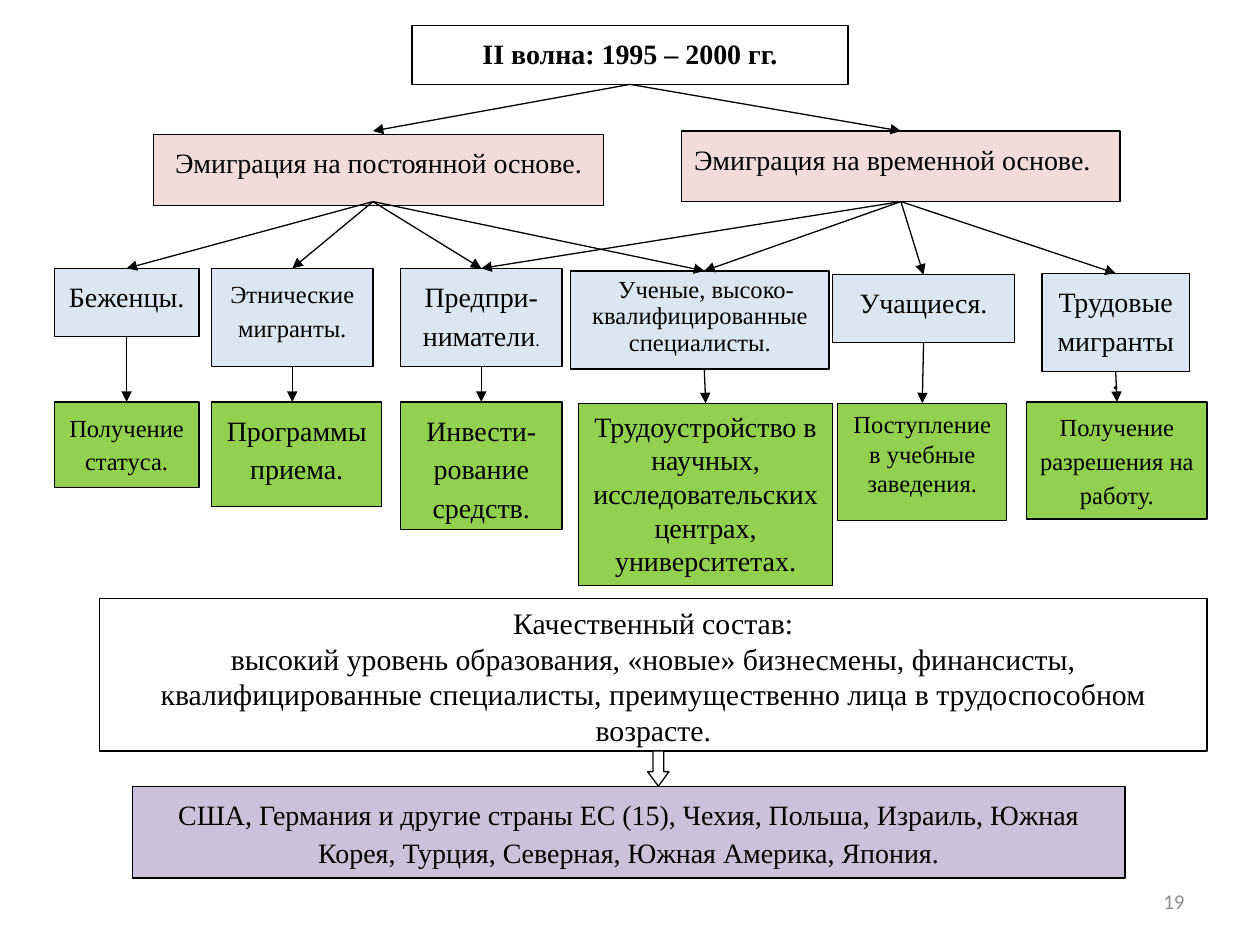
"""Builds a slide with a flow chart of the second emigration wave, 1995 – 2000."""
import pptx
import pptx.dml.color
import pptx.enum.shapes
import pptx.enum.text
import pptx.oxml.ns
import pptx.util
from lxml import etree

Inches, Pt = pptx.util.Inches, pptx.util.Pt
MSO_SHAPE = pptx.enum.shapes.MSO_SHAPE
ALIGN = pptx.enum.text.PP_ALIGN
ANCHOR = pptx.enum.text.MSO_ANCHOR

TITLE, BRANCH, GROUP, RESULT, PLAIN, COUNTRIES = (
    "FFFFFF", "F2DCDB", "DCE6F2", "92D050", "FFFFFF", "CCC1DA")

HEADING = ("II волна: 1995 – 2000 гг.", (3.27, 0.2, 3.46, 0.47))

BOXES = [
    ("permanent", BRANCH, (1.22, 1.07, 3.57, 0.56), "Эмиграция на постоянной основе.", {}),
    ("temporary", BRANCH, (5.41, 1.04, 3.48, 0.56), "Эмиграция на временной основе.",
     {"align": ALIGN.LEFT}),
    ("refugees", GROUP, (0.43, 2.13, 1.15, 0.54), "Беженцы.", {}),
    ("ethnic", GROUP, (1.68, 2.13, 1.28, 0.78), "Этнические мигранты.", {"size": 14}),
    ("business", GROUP, (3.18, 2.13, 1.28, 0.78), "Предпри-ниматели", {"small_end": "."}),
    ("scientists", GROUP, (4.53, 2.15, 2.05, 0.78),
     "Ученые, высоко-квалифицированные специалисты.",
     {"size": 14, "spacing": 0.9, "indent": 0.1}),
    ("students", GROUP, (6.61, 2.18, 1.44, 0.54), "Учащиеся.", {}),
    ("workers", GROUP, (8.27, 2.17, 1.17, 0.78), "Трудовые мигранты.", {}),
    ("status", RESULT, (0.43, 3.19, 1.15, 0.68), "Получение статуса.", {"size": 14}),
    ("programmes", RESULT, (1.68, 3.19, 1.35, 0.83), "Программы приема.", {}),
    ("investment", RESULT, (3.18, 3.19, 1.28, 1.01), "Инвести-рование средств.", {}),
    ("employment", RESULT, (4.59, 3.2, 2.02, 1.45),
     "Трудоустройство в научных, исследовательских центрах,\nуниверситетах.",
     {"spacing": 1, "after": 0}),
    ("study", RESULT, (6.65, 3.2, 1.34, 0.93), "Поступление\nв учебные заведения.",
     {"size": 14, "spacing": 1, "after": 0}),
    ("permit", RESULT, (8.15, 3.19, 1.43, 0.93), "Получение разрешения на работу.", {"size": 14}),
    ("quality", PLAIN, (0.79, 4.75, 8.79, 1.21),
     "Качественный состав:\nвысокий уровень образования, «новые» бизнесмены, финансисты, "
     "квалифицированные специалисты, преимущественно лица в трудоспособном возрасте.",
     {"size": 17, "spacing": 1, "after": 0}),
    ("countries", COUNTRIES, (1.05, 6.24, 7.88, 0.73),
     "США, Германия и другие страны ЕС (15), Чехия, Польша, Израиль, Южная Корея, "
     "Турция, Северная, Южная Америка, Япония.", {}),
]

LINKS = {
    "heading": ["permanent", "temporary"],
    "permanent": ["refugees", "ethnic", "business", "scientists"],
    "temporary": ["business", "scientists", "students", "workers"],
    "refugees": ["status"],
    "ethnic": ["programmes"],
    "business": ["investment"],
    "scientists": ["employment"],
    "students": ["study"],
    "workers": ["permit"],
}

OFF_CENTRE = {
    "permanent": (2.96, 1.04, 1.6),
    "scientists": (5.59, 2.15, 2.93),
    "programmes": (2.32, 3.19, 4.02),
}


def rgb(value):
    return pptx.dml.color.RGBColor.from_string(value)


def write(sp, text, size=16, font="Times New Roman", color="000000", bold=False,
          align=ALIGN.CENTER, anchor=ANCHOR.TOP, spacing=1.15, after=10, indent=0,
          small_end=""):
    tf = sp.text_frame
    tf.word_wrap = True
    tf.auto_size = pptx.enum.text.MSO_AUTO_SIZE.NONE
    tf.vertical_anchor = anchor
    for i, line in enumerate(text.split("\n")):
        p = tf.add_paragraph() if i else tf.paragraphs[0]
        p.alignment, p.line_spacing, p.space_after = align, spacing, Pt(after)
        if indent:
            p._p.get_or_add_pPr().set("indent", str(Inches(indent)))
        for part, points in ((line, size), (small_end, 10)):
            if part:
                r = p.add_run()
                r.text = part
                r.font.size, r.font.name, r.font.bold = Pt(points), font, bold
                r.font.color.rgb = rgb(color)


def paint(sp, fill):
    sp.shadow.inherit = False
    sp.fill.solid()
    sp.fill.fore_color.rgb = rgb(fill)
    sp.line.color.rgb = rgb("000000")
    sp.line.width = Pt(0.75)


def add_shape(s, kind, at, fill):
    sp = s.shapes.add_shape(kind, *map(Inches, at))
    paint(sp, fill)
    return sp


def ports(name, sp):
    if name in OFF_CENTRE:
        return [Inches(v) for v in OFF_CENTRE[name]]
    return sp.left + sp.width // 2, sp.top, sp.top + sp.height


def add_arrow(s, nodes, start, end):
    x1, _, y1 = ports(start, nodes[start])
    x2, y2, _ = ports(end, nodes[end])
    line = s.shapes.add_connector(pptx.enum.shapes.MSO_CONNECTOR.STRAIGHT, x1, y1, x2, y2)
    if start not in OFF_CENTRE:
        line.begin_connect(nodes[start], 2)
    if end not in OFF_CENTRE:
        line.end_connect(nodes[end], 0)
    line.line.color.rgb = rgb("000000")
    line.line.width = Pt(0.75)
    qn = pptx.oxml.ns.qn
    etree.SubElement(line.line._get_or_add_ln(), qn("a:tailEnd"), type="triangle")
    etree.SubElement(line._element.spPr, qn("a:effectLst"))


def main():
    prs = pptx.Presentation()
    prs.slide_width, prs.slide_height = Inches(10), Inches(7.5)
    s = prs.slides.add_slide(prs.slide_layouts[5])

    title = s.shapes.title
    text, at = HEADING
    title.left, title.top, title.width, title.height = map(Inches, at)
    paint(title, TITLE)
    write(title, text, bold=True)

    nodes = {"heading": title}
    for name, fill, at, text, style in BOXES:
        nodes[name] = add_shape(s, MSO_SHAPE.RECTANGLE, at, fill)
        write(nodes[name], text, **style)

    for start, ends in LINKS.items():
        for end in ends:
            add_arrow(s, nodes, start, end)

    down = add_shape(s, MSO_SHAPE.DOWN_ARROW, (5.14, 5.96, 0.17, 0.28), PLAIN)
    down.adjustments[0], down.adjustments[1] = 0.5, 0.68

    number = s.shapes.add_textbox(*map(Inches, (7.17, 6.95, 2.33, 0.4)))
    write(number, "19", size=12, font="Calibri", color="8C8C8C", align=ALIGN.RIGHT,
          anchor=ANCHOR.MIDDLE, spacing=1, after=0)

    prs.save("out.pptx")


if __name__ == "__main__":
    main()
